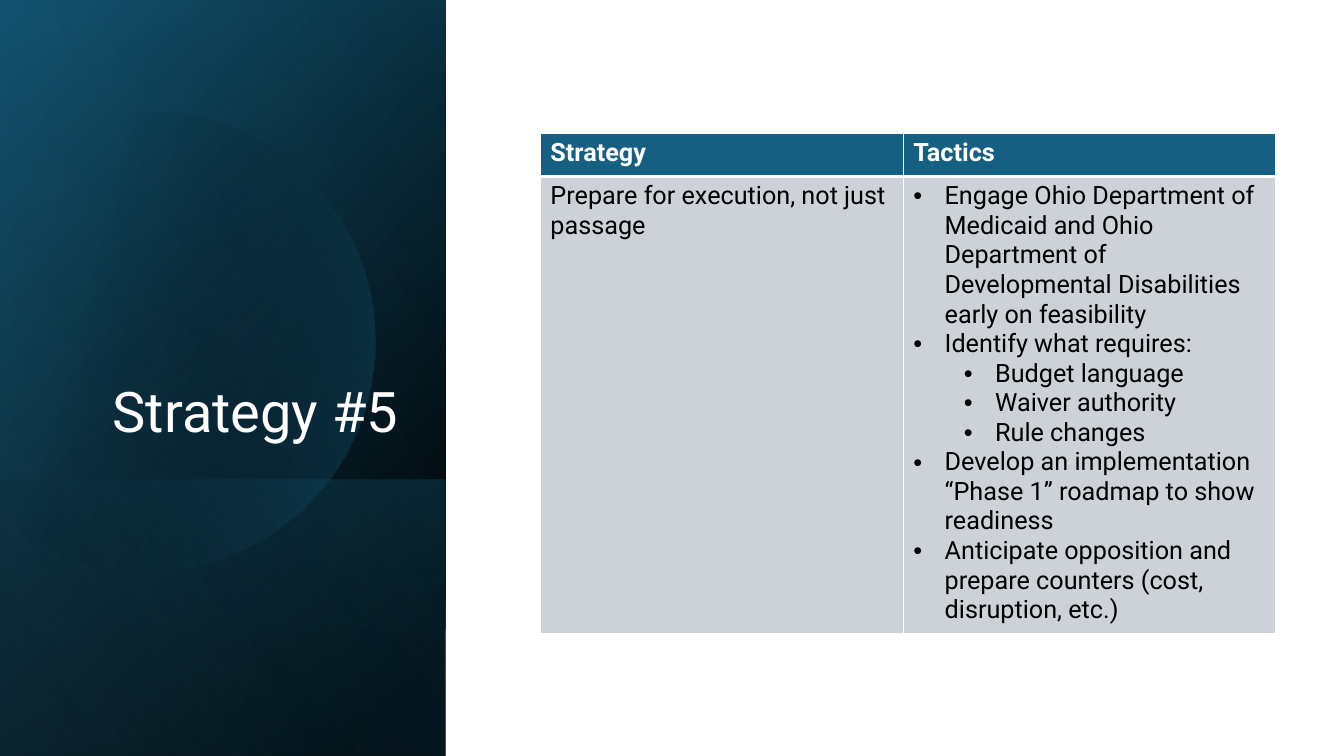
from dataclasses import dataclass

from pptx import Presentation
from pptx.dml.color import RGBColor
from pptx.enum.shapes import MSO_SHAPE as Preset
from pptx.enum.text import MSO_ANCHOR as Anchor, PP_ALIGN as Align
from pptx.oxml import parse_xml
from pptx.oxml.ns import nsdecls, qn
from pptx.util import Emu, Pt

PX = 9144  # 100 px to the inch
FONT = "Roboto"
WHITE, BLACK, TEAL, GREY = "FFFFFF", "000000", "156082", "CCD2D8"
BULLET_INDENT, LEVEL_INDENT = 31, 50


@dataclass
class Stop:
    position: int
    colour: str
    opacity: int = 100


@dataclass
class Panel:
    top: int
    height: int
    angle: int
    stops: list[Stop]


@dataclass
class Tactic:
    text: str
    level: int = 0


BASE_PANELS = [
    Panel(0, 750, 220, [Stop(8, BLACK), Stop(100, "104862")]),
    Panel(0, 750, 240, [Stop(0, BLACK, 0), Stop(99, TEAL, 46)]),
    Panel(476, 274, 140, [Stop(2, TEAL, 29), Stop(100, BLACK, 30)]),
]
GLOW_PANEL = Panel(0, 750, 150, [Stop(0, BLACK, 0), Stop(99, "46B1E1", 11)])
PANEL_WIDTH = 442

# Each curve: two control points and an end point
DISC_START = (149, 110)
DISC_RIGHT = [
    [(246, 112), (335, 177), (363, 275)],
    [(398, 397), (328, 523), (207, 558)],
    [(131, 580), (53, 561), (-3, 514)],
]
DISC_EDGE = [(-15, 503), (-15, 175), (0, 161)]
DISC_TOP = [
    [(23, 142), (50, 128), (80, 119)],
    [(103, 113), (126, 110), (149, 110)],
]
DISC_STOPS = [Stop(29, BLACK, 0), Stop(100, TEAL, 43)]

TACTICS = [
    Tactic("Engage Ohio Department of Medicaid and Ohio Department of "
           "Developmental Disabilities early on feasibility"),
    Tactic("Identify what requires:"),
    Tactic("Budget language", 1),
    Tactic("Waiver authority", 1),
    Tactic("Rule changes", 1),
    Tactic("Develop an implementation “Phase 1” roadmap to show readiness"),
    Tactic("Anticipate opposition and prepare counters (cost, disruption, etc.)"),
]
ROWS = [
    [[Tactic("Strategy")], [Tactic("Tactics")]],
    [[Tactic("Prepare for execution, not just passage")], TACTICS],
]


def px(length: int) -> Emu:
    return Emu(length * PX)


def rgb(colour: str) -> RGBColor:
    return RGBColor.from_string(colour)


def paint_gradient(shape, stops: list[Stop], angle: int) -> None:
    shape.shadow.inherit = False
    shape.line.fill.background()
    shape.fill.background()
    stop_xml = "".join(
        f'<a:gs pos="{s.position * 1000}"><a:srgbClr val="{s.colour}">'
        f'<a:alpha val="{s.opacity * 1000}"/></a:srgbClr></a:gs>' for s in stops)
    gradient = parse_xml(
        f'<a:gradFill {nsdecls("a")} rotWithShape="1"><a:gsLst>{stop_xml}</a:gsLst>'
        f'<a:lin ang="{angle * 60000}" scaled="0"/></a:gradFill>')
    properties = shape._element.spPr
    properties.replace(properties.find(qn("a:noFill")), gradient)


def draw_panel(slide, panel: Panel) -> None:
    shape = slide.shapes.add_shape(
        Preset.RECTANGLE, 0, px(panel.top), px(PANEL_WIDTH), px(panel.height))
    paint_gradient(shape, panel.stops, panel.angle)


def trace_curves(start: tuple, curves: list, steps: int = 24) -> list[tuple]:
    points = []
    for first, second, end in curves:
        for step in range(1, steps + 1):
            t = step / steps
            u = 1 - t
            points.append(tuple(
                u**3 * a + 3 * u * u * t * b + 3 * u * t * t * c + t**3 * d
                for a, b, c, d in zip(start, first, second, end)))
        start = end
    return points


def draw_disc(slide) -> None:
    outline = (trace_curves(DISC_START, DISC_RIGHT) + DISC_EDGE
               + trace_curves(DISC_EDGE[-1], DISC_TOP))
    builder = slide.shapes.build_freeform(*DISC_START, scale=PX)
    builder.add_line_segments(outline, close=True)
    paint_gradient(builder.convert_to_shape(), DISC_STOPS, 14)


def write_title(slide) -> None:
    title = slide.shapes.title
    slide.shapes._spTree.append(title._element)  # in front of the panels
    title.left, title.top, title.width, title.height = map(px, (64, 184, 341, 262))
    title.text_frame.text = "Strategy #5"
    title.text_frame.word_wrap = True
    title.text_frame.vertical_anchor = Anchor.BOTTOM
    line = title.text_frame.paragraphs[0]
    line.alignment = Align.RIGHT
    line.line_spacing = 0.9
    style_text(line, 40, WHITE)


def style_text(paragraph, size: int, colour: str, bold: bool = False) -> None:
    font = paragraph.font
    font.name, font.size, font.bold = FONT, Pt(size), bold
    font.color.rgb = rgb(colour)


def add_bullet(paragraph, level: int) -> None:
    paragraph.level = level
    properties = paragraph._p.get_or_add_pPr()
    properties.set("marL", str(px(BULLET_INDENT + level * LEVEL_INDENT)))
    properties.set("indent", str(px(-BULLET_INDENT)))
    properties.append(parse_xml(f'<a:buFont {nsdecls("a")} typeface="Arial"/>'))
    properties.append(parse_xml(f'<a:buChar {nsdecls("a")} char="•"/>'))


def add_borders(cell, is_header: bool) -> None:
    widths = {"L": 1, "R": 1, "T": 1 if is_header else 3, "B": 3 if is_header else 1}
    for side, width in widths.items():
        cell._tc.get_or_add_tcPr().append(parse_xml(
            f'<a:ln{side} {nsdecls("a")} w="{Pt(width)}"><a:solidFill>'
            f'<a:srgbClr val="{WHITE}"/></a:solidFill></a:ln{side}>'))


def fill_cell(cell, lines: list[Tactic], is_header: bool) -> None:
    add_borders(cell, is_header)
    cell.fill.solid()
    cell.fill.fore_color.rgb = rgb(TEAL if is_header else GREY)
    cell.text_frame.text = "\n".join(line.text for line in lines)
    for paragraph, line in zip(cell.text_frame.paragraphs, lines):
        if len(lines) > 1:
            add_bullet(paragraph, line.level)
        style_text(paragraph, 18, WHITE if is_header else BLACK, is_header)


def draw_strategy_table(slide) -> None:
    table = slide.shapes.add_table(2, 2, px(536), px(132), px(729), px(497)).table
    table.horz_banding = False
    for column, width in zip(table.columns, (360, 369)):
        column.width = px(width)
    for row, height in zip(table.rows, (43, 454)):
        row.height = px(height)
    for r, row_texts in enumerate(ROWS):
        for c, lines in enumerate(row_texts):
            fill_cell(table.cell(r, c), lines, r == 0)


def main() -> None:
    deck = Presentation()
    deck.slide_width, deck.slide_height = px(1333), px(750)
    slide = deck.slides.add_slide(deck.slide_layouts[5])
    # Side panel
    for panel in BASE_PANELS:
        draw_panel(slide, panel)
    draw_disc(slide)
    draw_panel(slide, GLOW_PANEL)
    # Content
    write_title(slide)
    draw_strategy_table(slide)
    deck.save("out.pptx")


if __name__ == "__main__":
    main()
